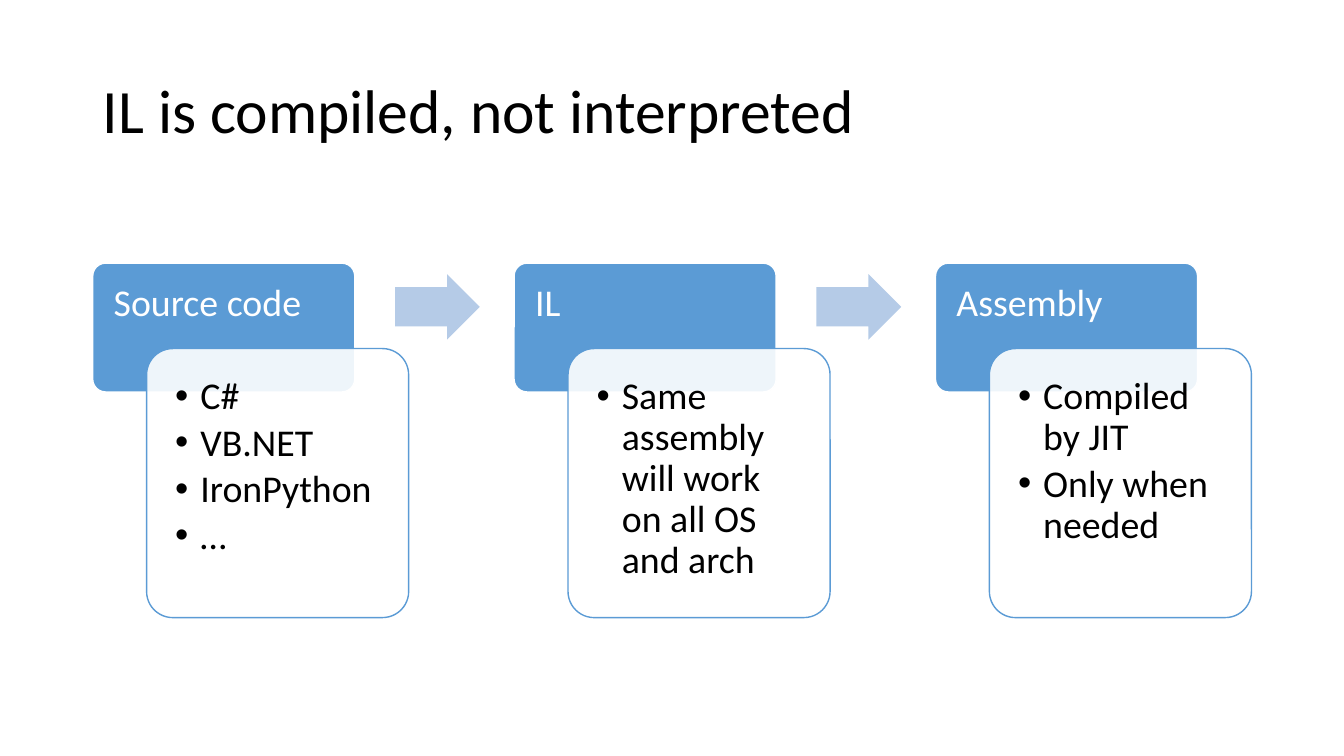
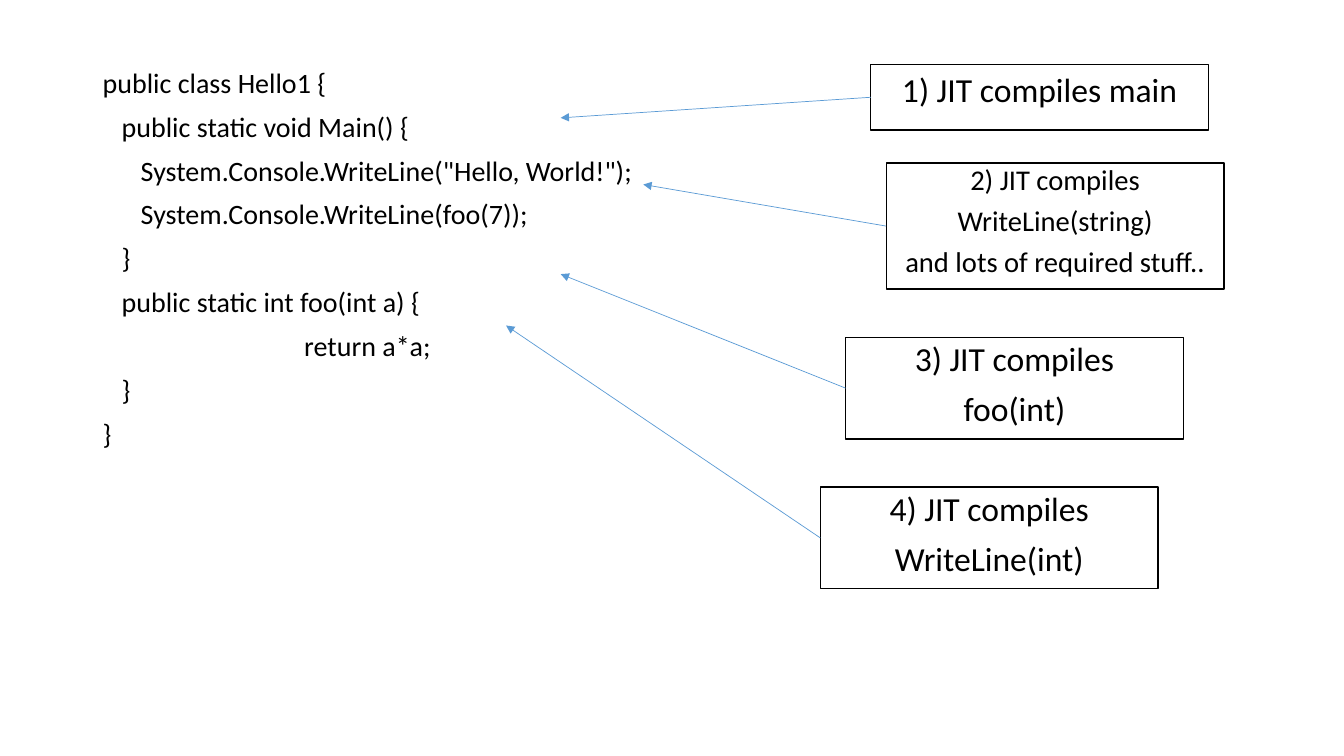
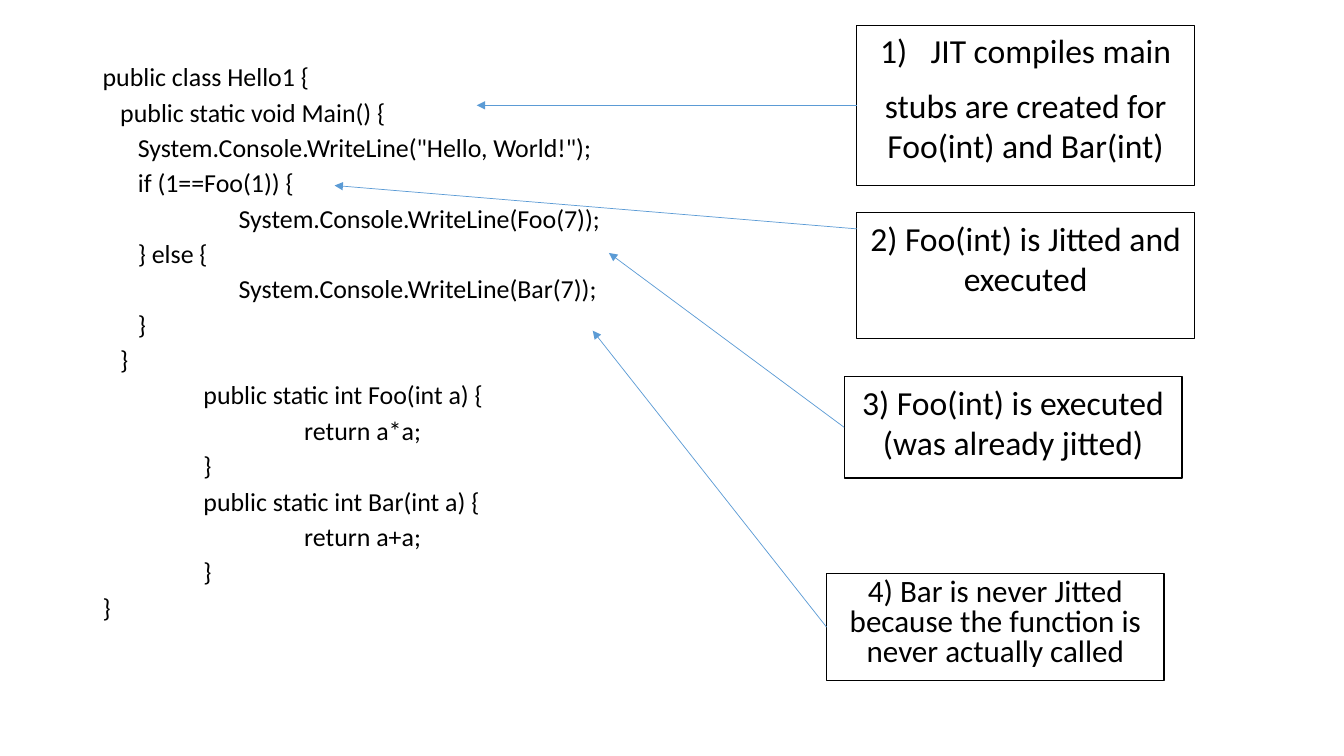
import lxml.etree
import pptx
import pptx.dml.color
import pptx.enum.shapes
import pptx.enum.text
import pptx.oxml.ns
import pptx.util

Pt = pptx.util.Pt
qn = pptx.oxml.ns.qn
SHAPES = pptx.enum.shapes.MSO_SHAPE
ALIGN = pptx.enum.text.PP_ALIGN
ANCHOR = pptx.enum.text.MSO_ANCHOR

# Shared style
FONT = "Calibri"
BLACK, WHITE, BLUE, PALE_BLUE = "000000", "FFFFFF", "5B9BD5", "B5CBE7"
TITLE_ONLY, BLANK = 5, 6
LEFT, CONTENT_WIDTH = 66.24, 828
CALLOUT_WIDTH = 241.2
TAB = 72
STEP_PER_SIZE = 0.68  # width of one code indent, relative to the text size

# Content: code lines are (tabs, steps, text)
STAGES = [
    ("Source code", ["C#", "VB.NET", "IronPython", "…"]),
    ("IL", ["Same assembly will work on all OS and arch"]),
    ("Assembly", ["Compiled by JIT", "Only when needed"]),
]
SIMPLE_CODE = [
    (0, 0, "public class Hello1 {"),
    (0, 1, "public static void Main() {"),
    (0, 2, 'System.Console.WriteLine("Hello, World!");'),
    (0, 2, "System.Console.WriteLine(foo(7));"),
    (0, 1, "}"),
    (0, 1, "public static int foo(int a) {"),
    (2, 0, "return a*a;"),
    (0, 1, "}"),
    (0, 0, "}"),
]
BRANCHING_CODE = [
    (0, 0, "public class Hello1 {"),
    (0, 1, "public static void Main() {"),
    (0, 2, 'System.Console.WriteLine("Hello, World!");'),
    (0, 2, "if (1==Foo(1)) {"),
    (1, 2, "System.Console.WriteLine(Foo(7));"),
    (0, 2, "} else {"),
    (1, 2, "System.Console.WriteLine(Bar(7));"),
    (0, 2, "}"),
    (0, 1, "}"),
    (1, 0, "public static int Foo(int a) {"),
    (2, 0, "return a*a;"),
    (1, 0, "}"),
    (1, 0, "public static int Bar(int a) {"),
    (2, 0, "return a+a;"),
    (1, 0, "}"),
    (0, 0, "}"),
]


def color(hex_text):
    return pptx.dml.color.RGBColor.from_string(hex_text)


# Text
def write(paragraph, text, size, ink=BLACK, align=ALIGN.LEFT, spacing=1.0, before=0, after=0):
    paragraph.alignment = align
    paragraph.line_spacing = spacing
    paragraph.space_before = Pt(before)
    paragraph.space_after = Pt(after)
    run = paragraph.add_run()
    run.text = text
    run.font.name = FONT
    run.font.size = Pt(size)
    run.font.color.rgb = color(ink)


def write_all(frame, texts, size, **style):
    """Write one paragraph for each text and return the paragraphs."""
    for index, text in enumerate(texts):
        paragraph = frame.add_paragraph() if index else frame.paragraphs[0]
        write(paragraph, text, size, **style)
    return frame.paragraphs


def indent(paragraph, margin, first=0):
    properties = paragraph._p.get_or_add_pPr()
    properties.set("marL", str(int(Pt(margin))))
    properties.set("indent", str(int(Pt(first))))
    return properties


def add_bullet(paragraph):
    properties = indent(paragraph, 18, -18)
    lxml.etree.SubElement(properties, qn("a:buFont"), typeface="Arial")
    lxml.etree.SubElement(properties, qn("a:buChar"), char="•")


def add_number(paragraph):
    properties = indent(paragraph, 36, -36)
    lxml.etree.SubElement(properties, qn("a:buFont"), typeface="+mj-lt")
    lxml.etree.SubElement(properties, qn("a:buAutoNum"), type="arabicParenR")


def set_frame(shape, insets=(7.2, 3.6, 7.2, 3.6)):
    frame = shape.text_frame
    frame.word_wrap = True
    frame.vertical_anchor = ANCHOR.TOP
    (frame.margin_left, frame.margin_top,
     frame.margin_right, frame.margin_bottom) = map(Pt, insets)
    return frame


# Shapes
def add_shape(slide, kind, box, fill, line=None, adjustments=(), opacity=None):
    shape = slide.shapes.add_shape(kind, *map(Pt, box))
    shape.shadow.inherit = False
    for index, value in enumerate(adjustments):
        shape.adjustments[index] = value
    shape.fill.solid()
    shape.fill.fore_color.rgb = color(fill)
    if opacity is not None:
        fill_color = shape._element.spPr.find(qn("a:solidFill")).find(qn("a:srgbClr"))
        lxml.etree.SubElement(fill_color, qn("a:alpha"), val=str(opacity * 1000))
    if line:
        shape.line.color.rgb = color(line)
        shape.line.width = Pt(1)
    else:
        shape.line.fill.background()
    return shape


def add_arrow(slide, start, end):
    connector = slide.shapes.add_connector(
        pptx.enum.shapes.MSO_CONNECTOR.STRAIGHT, *map(Pt, start + end))
    connector.line.color.rgb = color(BLUE)
    connector.line.width = Pt(0.5)
    properties = connector._element.spPr
    lxml.etree.SubElement(properties.find(qn("a:ln")), qn("a:tailEnd"), type="triangle")
    lxml.etree.SubElement(properties, qn("a:effectLst"))


def add_title(slide, text):
    title = slide.shapes.title
    title.left, title.top, title.width, title.height = map(Pt, (LEFT, 28.8, CONTENT_WIDTH, 104.4))
    frame = set_frame(title)
    frame.vertical_anchor = ANCHOR.MIDDLE
    write(frame.paragraphs[0], text, 44, spacing=0.9)


def add_code(slide, lines, size, spacing):
    box = slide.shapes.add_textbox(*map(Pt, (LEFT, 46, CONTENT_WIDTH, 440)))
    texts = [text for _, _, text in lines]
    paragraphs = write_all(set_frame(box), texts, size, spacing=spacing, before=9.7)
    for paragraph, (tabs, steps, _) in zip(paragraphs, lines):
        indent(paragraph, tabs * TAB + steps * STEP_PER_SIZE * size)


def add_callout(slide, left, top, height, texts, target, size=24, spacing=1.0, start=None):
    """Add a boxed remark and an arrow from its left edge to the code."""
    box = add_shape(slide, SHAPES.RECTANGLE, (left, top, CALLOUT_WIDTH, height), WHITE, BLACK)
    paragraphs = write_all(set_frame(box), texts, size,
                           align=ALIGN.CENTER, spacing=spacing, before=10)
    add_arrow(slide, (left, start or top + height / 2), target)
    return paragraphs


def add_stage(slide, left, heading, points):
    header = add_shape(slide, SHAPES.ROUNDED_RECTANGLE, (left, 188, 187.2, 92),
                       BLUE, WHITE, [0.1])
    write(set_frame(header, (12.3, 12.3, 12.3, 5)).paragraphs[0], heading, 27,
          ink=WHITE, spacing=0.9)
    card = add_shape(slide, SHAPES.ROUNDED_RECTANGLE, (left + 38.5, 249, 187.2, 192.2),
                     WHITE, BLUE, [0.1], opacity=90)
    for paragraph in write_all(set_frame(card, (15, 15, 15, 15)), points, 27,
                               spacing=0.9, after=4):
        add_bullet(paragraph)


# Slides
def build_pipeline(slide):
    add_title(slide, "IL is compiled, not interpreted")
    for index, (heading, points) in enumerate(STAGES):
        left = LEFT + index * 301
        add_stage(slide, left, heading, points)
        if index < len(STAGES) - 1:
            add_shape(slide, SHAPES.RIGHT_ARROW, (left + 216, 195.8, 60.5, 46.8),
                      PALE_BLUE, adjustments=[0.6, 0.5])


def build_simple_example(slide):
    add_code(slide, SIMPLE_CODE, 20, 0.9)
    add_callout(slide, 622, 46, 47, ["1) JIT compiles main"], (400.5, 84.2))
    add_callout(slide, 633, 116.5, 90,
                ["2) JIT compiles", "WriteLine(string)", "and lots of required stuff.."],
                (459.5, 131.8), size=20.4, spacing=0.8)
    add_callout(slide, 604, 241, 72.5, ["3) JIT compiles", "foo(int)"],
                (400.5, 195.8), spacing=0.9)
    add_callout(slide, 586, 348, 72.5, ["4) JIT compiles", "WriteLine(int)"],
                (361.5, 232.5), spacing=0.9)


def build_branching_example(slide):
    add_code(slide, BRANCHING_CODE, 18.5, 0.7)
    paragraphs = add_callout(slide, 612, 18, 114.5,
                             ["JIT compiles main", "stubs are created for Foo(int) and Bar(int)"],
                             (340.5, 75.25))
    add_number(paragraphs[0])
    add_callout(slide, 612, 152, 90, ["2) Foo(int) is Jitted and executed"],
                (239, 132.5), start=163.5)
    add_callout(slide, 603, 269, 72.5, ["3) Foo(int) is executed (was already jitted)"],
                (435, 180.7))
    add_callout(slide, 590.4, 409.7, 76.5,
                ["4) Bar is never Jitted because the function is never actually called"],
                (423.4, 236.2), size=22.2, spacing=0.8)


def main():
    presentation = pptx.Presentation()
    presentation.slide_width, presentation.slide_height = Pt(960), Pt(540)
    for layout, build in [(TITLE_ONLY, build_pipeline),
                          (BLANK, build_simple_example),
                          (BLANK, build_branching_example)]:
        build(presentation.slides.add_slide(presentation.slide_layouts[layout]))
    presentation.save("out.pptx")


if __name__ == "__main__":
    main()
